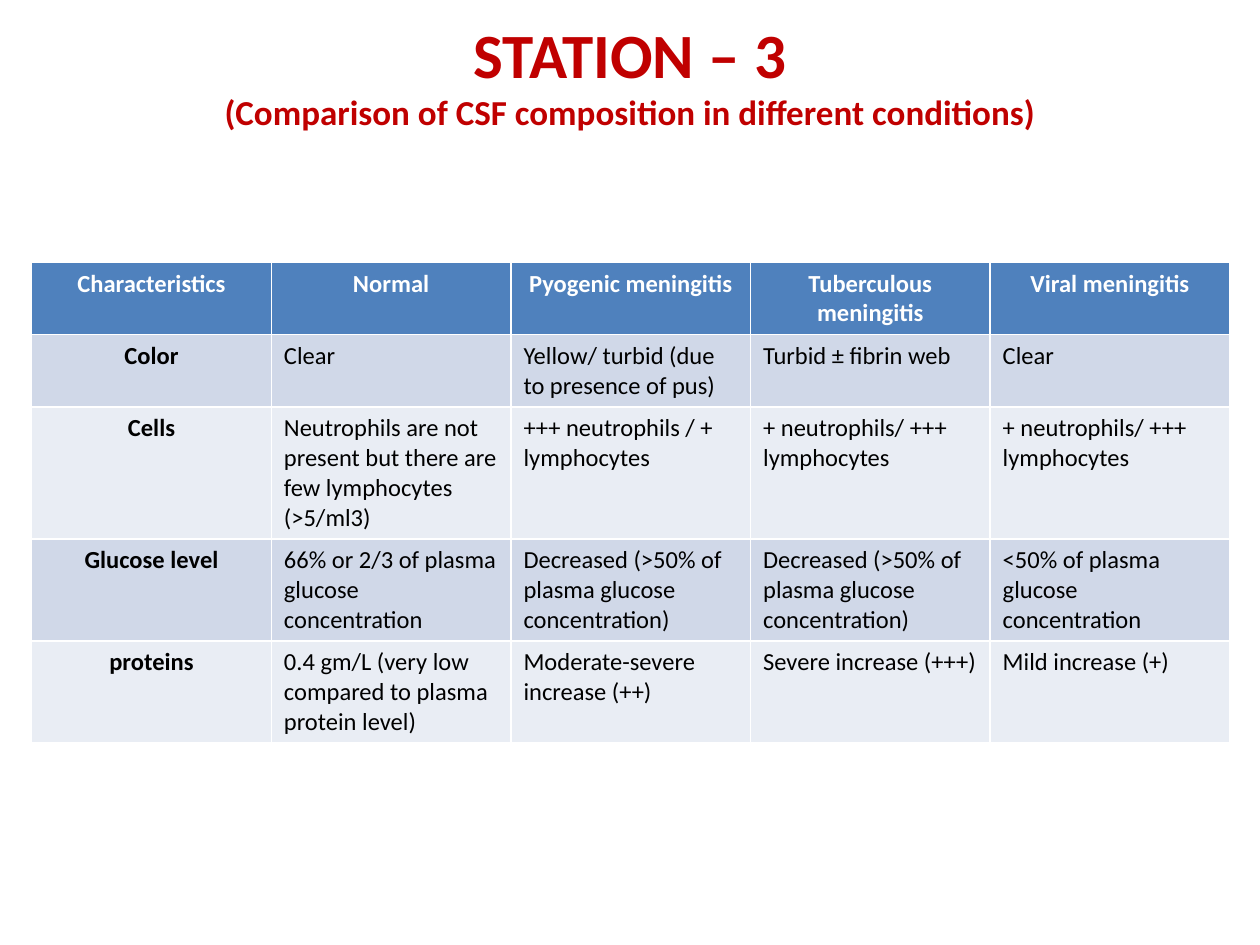
"""Build the slide comparing CSF composition in different conditions."""
from copy import deepcopy
from dataclasses import dataclass

from pptx import Presentation
from pptx import util as u
from pptx.dml import color
from pptx.enum import text


@dataclass(frozen=True)
class Theme:
    font: str = "Calibri"
    title: str = "C00000"
    header: str = "4F81BD"
    header_text: str = "FFFFFF"
    body_text: str = "000000"
    bands: tuple = ("D0D8E8", "E9EDF4")
    title_size: int = 36
    subtitle_size: int = 20
    table_size: int = 14


THEME = Theme()
COLUMN_WIDTH = u.Cm(4.83)
ROW_HEIGHT = u.Cm(1.03)

ROWS = [
    ["Characteristics", "Normal", "Pyogenic meningitis",
     "Tuberculous meningitis", "Viral meningitis"],
    ["Color", "Clear", "Yellow/ turbid (due to presence of pus)",
     "Turbid ± fibrin web", "Clear"],
    ["Cells",
     "Neutrophils are not present but there are few lymphocytes (>5/ml3)",
     "+++ neutrophils / + lymphocytes",
     "+ neutrophils/ +++ lymphocytes",
     "+ neutrophils/ +++ lymphocytes"],
    ["Glucose level", "66% or 2/3 of plasma glucose concentration",
     "Decreased (>50% of plasma glucose concentration)",
     "Decreased (>50% of plasma glucose concentration)",
     "<50% of plasma glucose concentration"],
    ["proteins", "0.4 gm/L (very low compared to plasma protein level)",
     "Moderate-severe increase (++)", "Severe increase (+++)",
     "Mild increase (+)"],
]


def add_run(p, content, size, rgb, bold):
    r = p.add_run()
    r.text = content
    r.font.name = THEME.font
    r.font.size = u.Pt(size)
    r.font.bold = bold
    r.font.color.rgb = color.RGBColor.from_string(rgb)
    return r


def set_title(s, heading, subtitle):
    sp = s.shapes.title
    sp.left, sp.top = u.Cm(1.27), u.Cm(0.03)
    sp.width, sp.height = u.Cm(22.86), u.Cm(2.92)
    tf = sp.text_frame
    tf.word_wrap = True
    tf.auto_size = text.MSO_AUTO_SIZE.NONE
    tf.vertical_anchor = text.MSO_ANCHOR.MIDDLE
    p = tf.paragraphs[0]
    p.alignment = text.PP_ALIGN.CENTER
    r = add_run(p, heading, THEME.title_size, THEME.title, True)
    p.add_line_break()
    p._p[-1].append(deepcopy(r._r.rPr))
    add_run(p, subtitle, THEME.subtitle_size, THEME.title, True)


def fill_cell(cell, content, fill, rgb, heading):
    cell.fill.solid()
    cell.fill.fore_color.rgb = color.RGBColor.from_string(fill)
    p = cell.text_frame.paragraphs[0]
    p.alignment = text.PP_ALIGN.CENTER if heading else text.PP_ALIGN.LEFT
    add_run(p, content, THEME.table_size, rgb, heading)


def add_comparison_table(s, rows):
    n_rows, n_cols = len(rows), len(rows[0])
    table = s.shapes.add_table(
        n_rows, n_cols, u.Cm(0.64), u.Cm(5.29),
        COLUMN_WIDTH * n_cols, ROW_HEIGHT * n_rows).table
    for i, row in enumerate(rows):
        is_header = i == 0
        fill = THEME.header if is_header else THEME.bands[(i - 1) % 2]
        rgb = THEME.header_text if is_header else THEME.body_text
        for j, content in enumerate(row):
            fill_cell(table.cell(i, j), content, fill, rgb,
                      is_header or j == 0)


def main():
    prs = Presentation()
    prs.slide_width, prs.slide_height = u.Cm(25.4), u.Cm(19.05)
    s = prs.slides.add_slide(prs.slide_layouts.get_by_name("Title Only"))
    set_title(s, "STATION – 3",
              "(Comparison of CSF composition in different conditions)")
    add_comparison_table(s, ROWS)
    prs.save("out.pptx")


if __name__ == "__main__":
    main()
